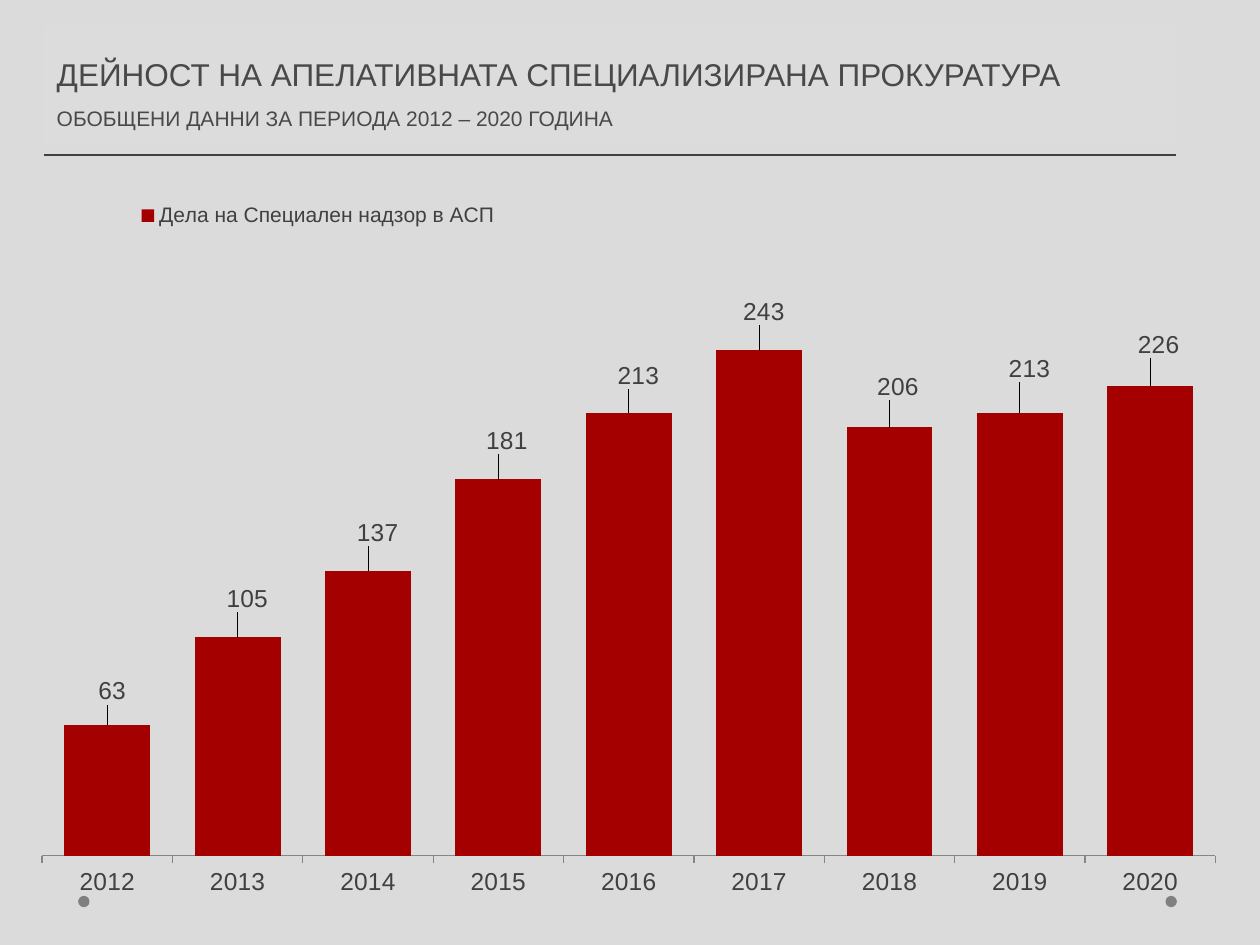
import pptx
import pptx.chart.data
import pptx.dml.color
import pptx.enum.chart
import pptx.enum.shapes
import pptx.enum.text
import pptx.oxml
import pptx.oxml.ns
import pptx.util
from lxml import etree

COLORS = {"page": "DBDBDB", "text": "404040", "dot": "808080",
          "band": "FFFFFF", "bar": "A40000", "axis": "868686"}
FONT = "Arial"
HEADINGS = [("ДЕЙНОСТ НА АПЕЛАТИВНАТА СПЕЦИАЛИЗИРАНА ПРОКУРАТУРА", 18),
            ("ОБОБЩЕНИ ДАННИ ЗА ПЕРИОДА 2012 – 2020 ГОДИНА", 12)]
SERIES = "Дела на Специален надзор в АСП"
CASES = {2012: 63, 2013: 105, 2014: 137, 2015: 181, 2016: 213,
         2017: 243, 2018: 206, 2019: 213, 2020: 226}
LABEL_SHIFTS = [(0.4, -2), (0.8, -2.7), (0.8, -2.6), (0.7, -2.7), (0.8, -2.5),
                (0.4, -2.7), (0.7, -3), (0.8, -3.4), (0.7, -3)]


def rgb(name):
    """Return the named colour."""
    return pptx.dml.color.RGBColor.from_string(COLORS[name])


def inches(*lengths):
    """Return the lengths as slide units."""
    return [pptx.util.Inches(length) for length in lengths]


def style_font(font, size):
    """Apply the common font at the given size."""
    font.name, font.size = FONT, pptx.util.Pt(size)
    font.color.rgb = rgb("text")


def add_plain(page, kind, box, color):
    """Add a flat shape without an outline."""
    shape = page.shapes.add_shape(kind, *inches(*box))
    shape.shadow.inherit = False
    shape.fill.solid()
    shape.fill.fore_color.rgb = rgb(color)
    shape.line.fill.background()
    return shape


def add_dots(page, box):
    """Place a dot at each end of the footer box."""
    left, top, width, size = box
    for x in (left, left + width - size):
        add_plain(page, pptx.enum.shapes.MSO_SHAPE.OVAL, (x, top, size, size), "dot")


def add_header(page, box):
    """Place the translucent band, the two headings and the rule."""
    left, top, width, height = box
    band = add_plain(page, pptx.enum.shapes.MSO_SHAPE.RECTANGLE,
                     (left, top, width, height * 0.92), "band")
    color = band.fill._xPr.find(".//" + pptx.oxml.ns.qn("a:srgbClr"))
    etree.SubElement(color, pptx.oxml.ns.qn("a:alpha"), val="5000")
    title = page.shapes.title
    title.left, title.top, title.width, title.height = inches(
        left, top + 0.03, width + 0.29, 0.86)
    frame = title.text_frame
    frame.word_wrap = True
    frame.auto_size = pptx.enum.text.MSO_AUTO_SIZE.NONE
    frame.vertical_anchor = pptx.enum.text.MSO_ANCHOR.TOP
    frame.text = "\n".join(text for text, _ in HEADINGS)
    for para, (_, size) in zip(frame.paragraphs, HEADINGS):
        para.alignment = pptx.enum.text.PP_ALIGN.LEFT
        para.line_spacing = 1.5
        para.space_before = pptx.util.Pt(0)
        style_font(para.font, size)
    rule = page.shapes.add_connector(
        pptx.enum.shapes.MSO_CONNECTOR.STRAIGHT,
        *inches(left, top + height, left + width, top + height))
    rule.line.color.rgb = rgb("text")
    rule.line.width = pptx.util.Pt(0.75)
    etree.SubElement(rule._element.spPr, pptx.oxml.ns.qn("a:effectLst"))


def make_layout(**settings):
    """Build a manual chart layout."""
    items = "".join(f'<c:{key} val="{value}"/>' for key, value in settings.items())
    return pptx.oxml.parse_xml(
        f'<c:layout {pptx.oxml.ns.nsdecls("c")}>'
        f'<c:manualLayout>{items}</c:manualLayout></c:layout>')


def place_parts(chart):
    """Set the places of the plot, the legend and the value labels."""
    root = chart.element
    plot_area = root.xpath(".//c:plotArea")[0]
    for old in plot_area.xpath("./c:layout"):
        plot_area.remove(old)
    plot_area.insert(0, make_layout(layoutTarget="inner", xMode="edge", yMode="edge",
                                    x=0.019, y=0.077, w=0.961, h=0.848))
    legend = root.xpath(".//c:legend")[0]
    for old in legend.xpath("./c:layout"):
        legend.remove(old)
    legend.xpath("./c:legendPos")[0].addnext(
        make_layout(xMode="edge", yMode="edge", x=0.08, y=0.02, w=0.33, h=0.07))
    for label, (x, y) in zip(root.xpath(".//c:dLbl"), LABEL_SHIFTS):
        label.xpath("./c:idx")[0].addnext(make_layout(x=x / 100, y=y / 100))


def add_case_chart(page, box):
    """Place the column chart of yearly cases."""
    data = pptx.chart.data.CategoryChartData()
    data.categories = [str(year) for year in CASES]
    data.add_series(SERIES, CASES.values())
    chart = page.shapes.add_chart(
        pptx.enum.chart.XL_CHART_TYPE.COLUMN_CLUSTERED, *inches(*box), data).chart
    style_font(chart.font, 14)
    chart.has_title = False
    chart.has_legend = True
    chart.legend.position = pptx.enum.chart.XL_LEGEND_POSITION.TOP
    chart.legend.include_in_layout = False
    style_font(chart.legend.font, 12)
    values = chart.value_axis
    values.visible = False
    values.has_major_gridlines = False
    values.minimum_scale, values.maximum_scale = 0, 300
    years = chart.category_axis
    years.major_tick_mark = pptx.enum.chart.XL_TICK_MARK.OUTSIDE
    years.format.line.color.rgb = rgb("axis")
    style_font(years.tick_labels.font, 14)
    plot = chart.plots[0]
    plot.gap_width = 52
    plot.vary_by_categories = False
    series = plot.series[0]
    series.format.fill.solid()
    series.format.fill.fore_color.rgb = rgb("bar")
    outside = pptx.enum.chart.XL_LABEL_POSITION.OUTSIDE_END
    labels = series.data_labels
    labels.show_value = True
    labels.position = outside
    style_font(labels.font, 14)
    for index in range(len(CASES)):
        label = series.points[index].data_label
        style_font(label.font, 14)
        label.position = outside
    place_parts(chart)


def main():
    """Build and save the slide."""
    deck = pptx.Presentation()
    deck.slide_width, deck.slide_height = inches(10, 7.5)
    page = deck.slides.add_slide(deck.slide_layouts[5])
    page.background.fill.solid()
    page.background.fill.fore_color.rgb = rgb("page")
    add_dots(page, (0.62, 7.11, 8.72, 0.09))
    add_header(page, (0.35, 0.21, 8.98, 1.02))
    add_case_chart(page, (0.15, 1.39, 9.69, 5.84))
    deck.save("out.pptx")


if __name__ == "__main__":
    main()
